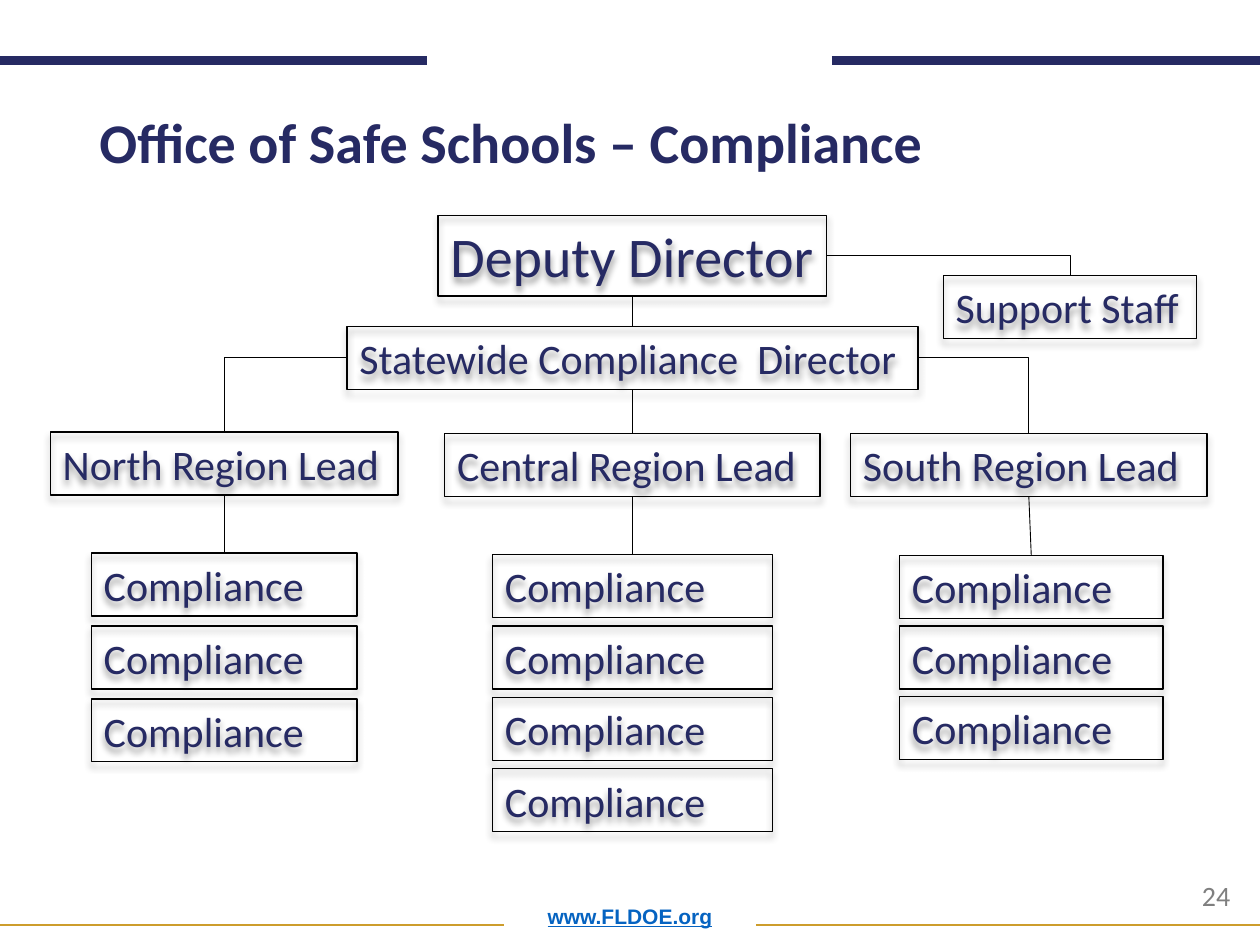
from lxml.etree import SubElement
from pptx import Presentation
from pptx.dml.color import RGBColor
from pptx.enum.shapes import MSO_CONNECTOR, MSO_SHAPE
from pptx.enum.text import MSO_ANCHOR, MSO_AUTO_SIZE, PP_ALIGN
from pptx.oxml import parse_xml
from pptx.oxml.ns import nsdecls, qn
from pptx.util import Cm, Pt

NAVY = RGBColor(0x26, 0x2A, 0x63)
GOLD = RGBColor(0xCD, 0x9D, 0x2C)
GRAY = RGBColor(0x7F, 0x7F, 0x7F)
LINK_BLUE = RGBColor(0x05, 0x63, 0xC1)
BLACK = RGBColor(0, 0, 0)

TITLE = "Office of Safe Schools – Compliance"
WEB_ADDRESS = "www.FLDOE.org"
PAGE_NUMBER = "24"

# Lengths in centimetres
SLIDE_WIDTH, SLIDE_HEIGHT = 25.4, 19.05
BOX_HEIGHT = 1.27
CENTER = 12.75

# Rules: start x, end x, y, colour, points
RULES = [
    (0, 8.61, 1.22, NAVY, 5),
    (16.77, SLIDE_WIDTH, 1.22, NAVY, 5),
    (0, 10.16, 18.64, GOLD, 1),
    (15.24, SLIDE_WIDTH, 18.64, GOLD, 1),
]

# Management: text, centre x, top, width, height, text size
MANAGEMENT = [
    ("Deputy Director", CENTER, 4.34, 7.84, 1.63, 32),
    ("Statewide Compliance  Director", CENTER, 6.58, 11.51, BOX_HEIGHT, 24),
    ("Support Staff", 21.57, 5.56, 5.11, BOX_HEIGHT, 24),
]

# Regions: lead, (centre x, top, width), side of the director it leaves from,
# then the staff: count, (centre x, first top, width), pitch
REGIONS = [
    ("North Region Lead", (4.52, 8.71, 7.01), 1, 3, (4.52, 11.15, 5.36), 1.47),
    ("Central Region Lead", (CENTER, 8.74, 7.57), 2, 4, (CENTER, 11.18, 5.64), 1.44),
    ("South Region Lead", (20.74, 8.74, 7.19), 3, 3, (20.79, 11.2, 5.31), 1.42),
]
STAFF_TEXT = "Compliance"
TOP, BOTTOM, RIGHT = 0, 2, 3


def format_text(shape, text, size, color, font="Calibri", bold=False):
    frame = shape.text_frame
    frame.word_wrap = True
    frame.text = text
    paragraph = frame.paragraphs[0]
    paragraph.alignment = PP_ALIGN.LEFT
    run_font = paragraph.runs[0].font
    run_font.name, run_font.size, run_font.bold = font, Pt(size), bold
    run_font.color.rgb = color
    return paragraph


def add_box(shapes, text, center, top, width, height=BOX_HEIGHT, size=24):
    box = shapes.add_shape(MSO_SHAPE.RECTANGLE, Cm(center - width / 2), Cm(top),
                           Cm(width), Cm(height))
    box.fill.background()
    box.line.color.rgb = BLACK
    box.line.width = Pt(0.75)
    format_text(box, text, size, NAVY)
    box.text_frame.vertical_anchor = MSO_ANCHOR.TOP
    box.text_frame.auto_size = MSO_AUTO_SIZE.SHAPE_TO_FIT_TEXT
    box._element.spPr.append(parse_xml(
        f'<a:effectLst {nsdecls("a")}><a:outerShdw blurRad="50800" dist="38100" '
        'dir="5400000" algn="t" rotWithShape="0"><a:srgbClr val="000000">'
        '<a:alpha val="40000"/></a:srgbClr></a:outerShdw></a:effectLst>'))
    return box


def format_line(connector, color, points):
    connector.line.color.rgb = color
    connector.line.width = Pt(points)
    SubElement(connector._element.spPr, qn("a:effectLst"))


def join(shapes, upper, side, lower):
    """Join a side of the upper box to the top of the lower one."""
    straight = side == BOTTOM
    kind = MSO_CONNECTOR.STRAIGHT if straight else MSO_CONNECTOR.ELBOW
    connector = shapes.add_connector(kind, 0, 0, 0, 0)
    connector.begin_connect(upper, side)
    connector.end_connect(lower, TOP)
    if not straight:
        # One bend instead of two
        connector._element.spPr.find(qn("a:prstGeom")).set("prst", "bentConnector2")
    format_line(connector, BLACK, 0.5)


def main():
    presentation = Presentation()
    presentation.slide_width = Cm(SLIDE_WIDTH)
    presentation.slide_height = Cm(SLIDE_HEIGHT)
    slide = presentation.slides.add_slide(presentation.slide_layouts[5])
    shapes = slide.shapes

    # Rules at the top and bottom
    for start, end, y, color, points in RULES:
        rule = shapes.add_connector(MSO_CONNECTOR.STRAIGHT, Cm(start), Cm(y), Cm(end), Cm(y))
        format_line(rule, color, points)

    # Title
    title = shapes.title
    title.left, title.top, title.width, title.height = Cm(1.75), Cm(2.21), Cm(22.25), Cm(1.45)
    format_text(title, TITLE, 32, NAVY, bold=True).line_spacing = 0.9
    title.text_frame.vertical_anchor = MSO_ANCHOR.BOTTOM
    title.text_frame.auto_size = MSO_AUTO_SIZE.NONE

    # Footer
    footer = shapes.add_textbox(Cm(1.75), Cm(17.78), Cm(21.9), Cm(1.07))
    address = format_text(footer, WEB_ADDRESS, 12, LINK_BLUE, "Arial", True)
    address.alignment = PP_ALIGN.CENTER
    address.line_spacing = 0.9
    address.runs[0].font.underline = True
    footer.text_frame.vertical_anchor = MSO_ANCHOR.BOTTOM
    number = shapes.add_textbox(Cm(23.98), Cm(17.58), Cm(1.32), Cm(0.94))
    format_text(number, PAGE_NUMBER, 16, GRAY)

    # Management
    deputy, director, support = [add_box(shapes, *entry) for entry in MANAGEMENT]
    join(shapes, deputy, BOTTOM, director)
    join(shapes, deputy, RIGHT, support)

    # Regions
    for lead_text, lead_place, side, count, (center, top, width), pitch in REGIONS:
        lead = add_box(shapes, lead_text, *lead_place)
        staff = [add_box(shapes, STAFF_TEXT, center, top + row * pitch, width)
                 for row in range(count)]
        join(shapes, director, side, lead)
        join(shapes, lead, BOTTOM, staff[0])

    presentation.save("out.pptx")


if __name__ == "__main__":
    main()
